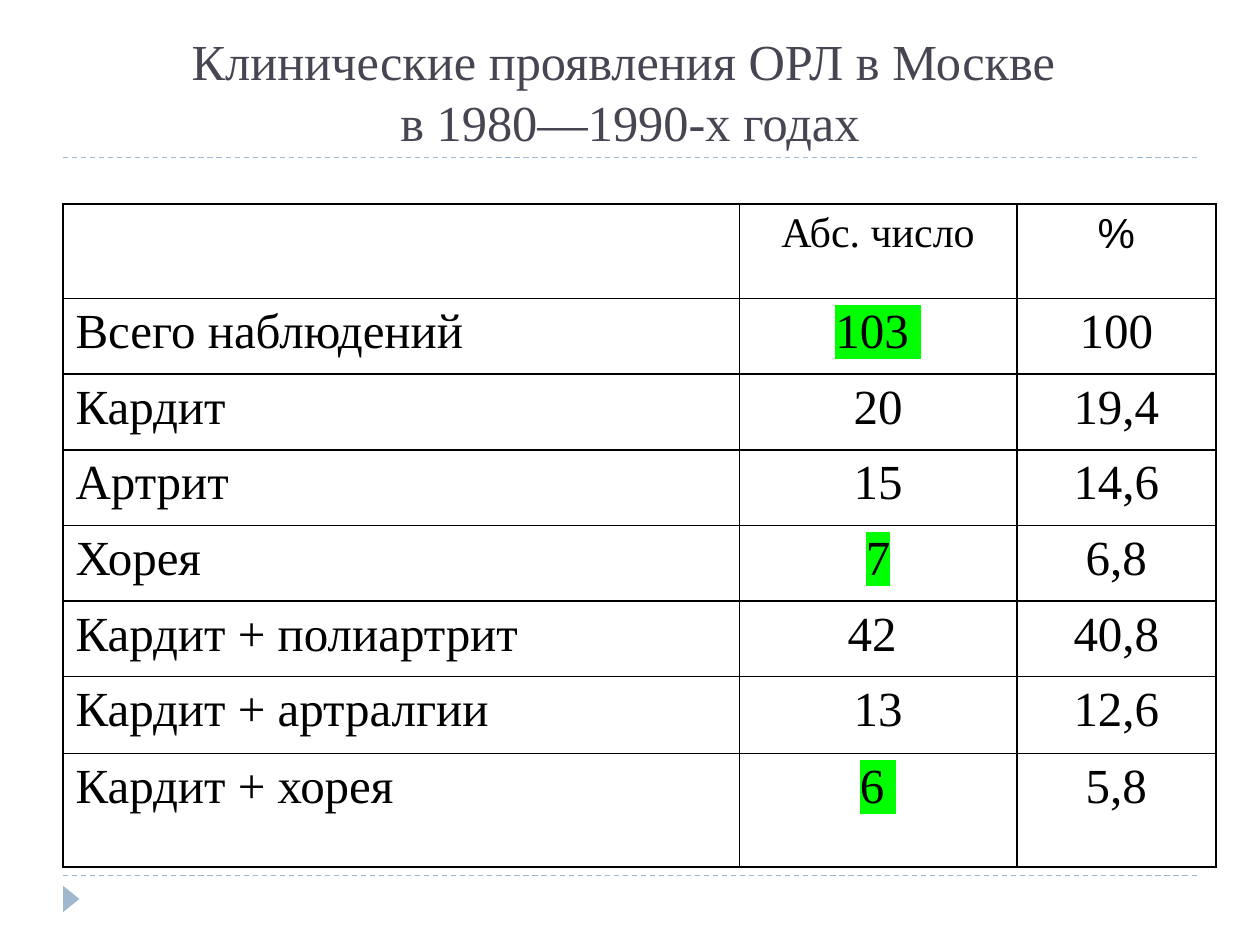
import pptx
import pptx.util
import pptx.dml.color
import pptx.enum.dml
import pptx.enum.shapes
import pptx.enum.text
import pptx.oxml
import pptx.oxml.ns
import lxml.etree

Inches = pptx.util.Inches
Pt = pptx.util.Pt
ALIGN = pptx.enum.text.PP_ALIGN
COLORS = {"accent": "9FB8CD", "title": "464653", "text": "000000", "highlight": "00FF00"}
SERIF = "Times New Roman"


def rgb(name):
    return pptx.dml.color.RGBColor.from_string(COLORS[name])


def add_colored(parent, tag, color, index, **attributes):
    element = lxml.etree.Element(pptx.oxml.ns.qn(tag), attributes)
    holder = element
    if tag != "a:highlight":
        holder = lxml.etree.SubElement(element, pptx.oxml.ns.qn("a:solidFill"))
    lxml.etree.SubElement(holder, pptx.oxml.ns.qn("a:srgbClr"), val=COLORS[color])
    parent.insert(index, element)


presentation = pptx.Presentation()
presentation.slide_width = Inches(10)
presentation.slide_height = Inches(7.5)
slide = presentation.slides.add_slide(presentation.slide_layouts[6])

for y in (6.95, 1.25):
    rule = slide.shapes.add_connector(
        pptx.enum.shapes.MSO_CONNECTOR.STRAIGHT, Inches(0.5), Inches(y), Inches(9.5), Inches(y))
    rule.line.color.rgb = rgb("accent")
    rule.line.width = Pt(0.75)
    rule.line.dash_style = pptx.enum.dml.MSO_LINE.DASH
    lxml.etree.SubElement(rule._element.spPr, pptx.oxml.ns.qn("a:effectLst"))

marker = slide.shapes.add_shape(
    pptx.enum.shapes.MSO_SHAPE.ISOSCELES_TRIANGLE, Inches(0.46), Inches(7.07), Inches(0.21), Inches(0.13))
marker.rotation = 90
marker.shadow.inherit = False
marker.fill.solid()
marker.fill.fore_color.rgb = rgb("accent")
marker.line.fill.background()

title = slide.shapes.add_textbox(Inches(0.5), Inches(0.17), Inches(9), Inches(1.08))
title.text_frame.word_wrap = True
title.text_frame.vertical_anchor = pptx.enum.text.MSO_ANCHOR.BOTTOM
title.text_frame.text = "Клинические проявления ОРЛ в Москве \vв 1980—1990-х годах"
title_paragraph = title.text_frame.paragraphs[0]
title_paragraph.alignment = ALIGN.CENTER
for run in title_paragraph.runs:
    run.font.size = Pt(28.8)
    run.font.name = SERIF
    run.font.color.rgb = rgb("title")

rows = [
    ("", "Абс. число", "%"),
    ("Всего наблюдений", "103 ", "100"),
    ("Кардит", "20", "19,4"),
    ("Артрит", "15", "14,6"),
    ("Хорея", "7", "6,8"),
    ("Кардит + полиартрит", "42 ", "40,8"),
    ("Кардит + артралгии", "13", "12,6"),
    ("Кардит + хорея", "6 ", "5,8"),
]
highlighted_rows = (1, 4, 7)
column_widths = (5.37, 2.2, 1.58)
row_heights = [0.75] + [0.6] * 5 + [0.61, 0.9]

table = slide.shapes.add_table(
    len(rows), len(column_widths), Inches(0.5), Inches(1.62), Inches(9.15), Inches(5.28)).table
table.first_row = False
table.horz_banding = False
for column, width in zip(table.columns, column_widths):
    column.width = Inches(width)
for row, height in zip(table.rows, row_heights):
    row.height = Inches(height)

for row_index, values in enumerate(rows):
    for column_index, value in enumerate(values):
        cell = table.cell(row_index, column_index)
        cell.fill.background()
        properties = cell._tc.get_or_add_tcPr()
        for index, side in enumerate(("a:lnL", "a:lnR", "a:lnT", "a:lnB")):
            add_colored(properties, side, "text", index, w=str(Pt(1)))
        if not value:
            continue
        cell.text_frame.text = value
        paragraph = cell.text_frame.paragraphs[0]
        paragraph.alignment = ALIGN.CENTER if column_index else ALIGN.LEFT
        run = paragraph.runs[0]
        run.font.size = Pt(28 if row_index else 24)
        run.font.name = "Arial" if value == "%" else SERIF
        run.font.color.rgb = rgb("text")
        if column_index == 1 and row_index in highlighted_rows:
            add_colored(run.font._element, "a:highlight", "highlight", 1)

presentation.save("out.pptx")
